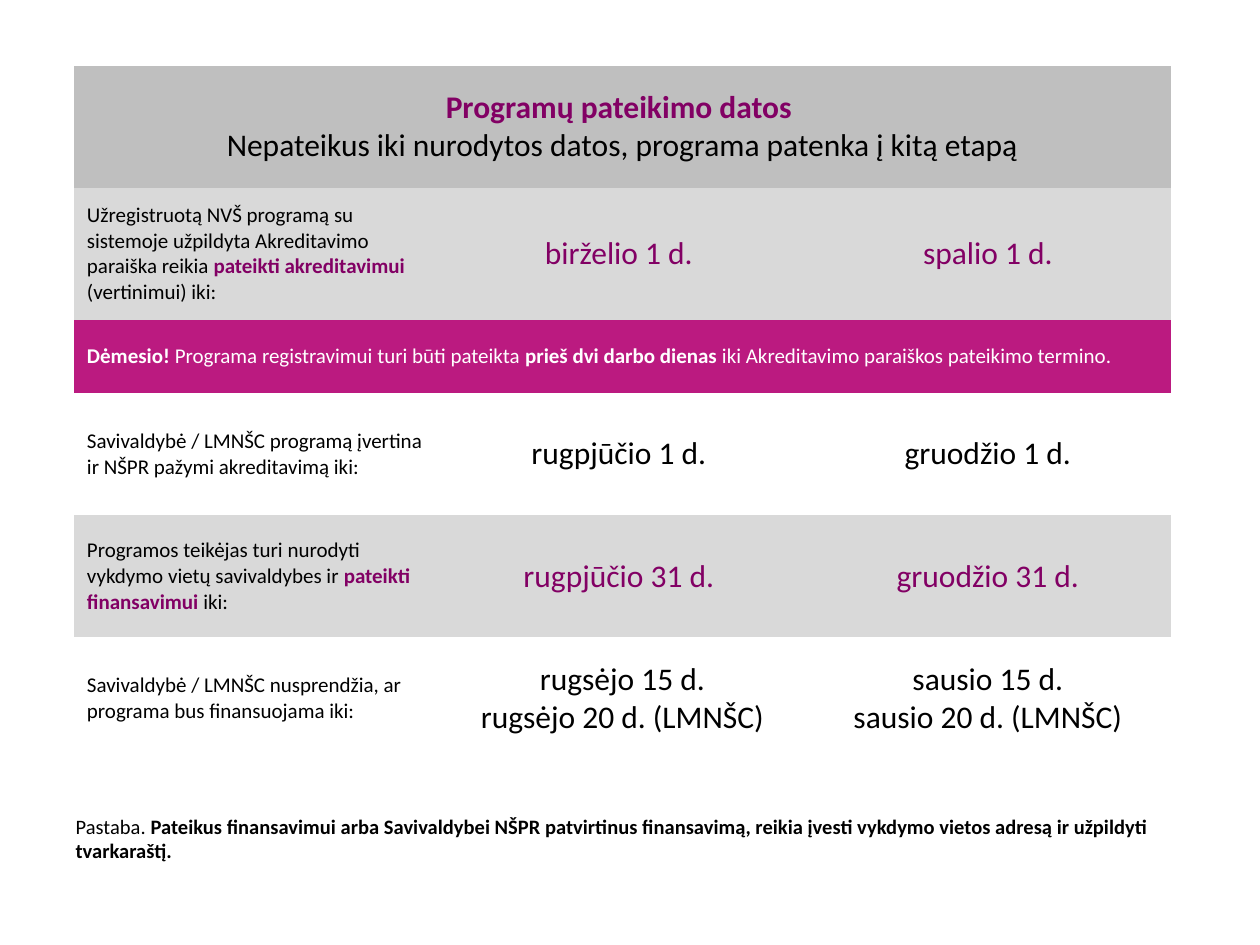
from pptx import Presentation
from pptx.dml.color import RGBColor
from pptx.enum.text import MSO_ANCHOR, PP_ALIGN
from pptx.oxml.ns import qn
from pptx.util import Inches, Pt

PURPLE = RGBColor(0x82, 0x00, 0x64)
MAGENTA = RGBColor(0xBB, 0x1A, 0x80)
BLACK = RGBColor(0x00, 0x00, 0x00)
WHITE = RGBColor(0xFF, 0xFF, 0xFF)
HEADER_GRAY = RGBColor(0xBF, 0xBF, 0xBF)
ROW_GRAY = RGBColor(0xD9, 0xD9, 0xD9)
NO_GRID_STYLE = "{2D5ABB26-0587-4C30-8999-92F81FD0307C}"

HEADING = [
    [("Programų pateikimo datos ", True, PURPLE)],
    [("Nepateikus iki nurodytos datos, programa patenka į kitą etapą", False, BLACK)],
]
WARNING = [[
    ("Dėmesio! ", True, WHITE),
    ("Programa registravimui turi būti pateikta ", False, WHITE),
    ("prieš dvi darbo dienas ", True, WHITE),
    ("iki Akreditavimo paraiškos pateikimo termino.", False, WHITE),
]]
STAGES = {
    1: ([("Užregistruotą NVŠ programą su sistemoje užpildyta Akreditavimo paraiška reikia ", False, BLACK),
         ("pateikti akreditavimui ", True, PURPLE),
         ("(vertinimui) iki:", False, BLACK)],
        [["birželio 1 d. "], ["spalio 1 d."]], PURPLE, ROW_GRAY),
    3: ([("Savivaldybė / LMNŠC programą įvertina ir NŠPR pažymi akreditavimą iki:", False, BLACK)],
        [["rugpjūčio 1 d. "], ["gruodžio 1 d."]], BLACK, None),
    4: ([("Programos teikėjas turi nurodyti vykdymo vietų savivaldybes ir ", False, BLACK),
         ("pateikti finansavimui", True, PURPLE),
         (" iki:", False, BLACK)],
        [["rugpjūčio 31 d. "], ["gruodžio 31 d."]], PURPLE, ROW_GRAY),
    5: ([("Savivaldybė / LMNŠC nusprendžia, ar programa bus finansuojama iki:", False, BLACK)],
        [["rugsėjo 15 d.", "rugsėjo 20 d. (LMNŠC)"],
         ["sausio 15 d.", "sausio 20 d. (LMNŠC)"]], BLACK, None),
}
NOTE = [[
    ("Pastaba. ", False, BLACK),
    ("Pateikus finansavimui arba Savivaldybei NŠPR patvirtinus finansavimą, "
     "reikia įvesti vykdymo vietos adresą ir užpildyti tvarkaraštį.", True, BLACK),
]]
COLUMN_WIDTH = 2.9
ROW_HEIGHTS = [0.97, 1.05, 0.58, 0.97, 0.97, 0.97]


def write(frame, paragraphs, size=12, align=PP_ALIGN.LEFT):
    for index, runs in enumerate(paragraphs):
        paragraph = frame.add_paragraph() if index else frame.paragraphs[0]
        paragraph.alignment = align
        for text, bold, color in runs:
            run = paragraph.add_run()
            run.text = text
            run.font.name = "Calibri"
            run.font.size = Pt(size)
            run.font.bold = bold
            run.font.color.rgb = color


def fill_cell(cell, paragraphs, fill, **text_format):
    cell.vertical_anchor = MSO_ANCHOR.MIDDLE
    if fill is None:
        cell.fill.background()
    else:
        cell.fill.solid()
        cell.fill.fore_color.rgb = fill
    write(cell.text_frame, paragraphs, **text_format)


def main():
    presentation = Presentation()
    presentation.slide_width, presentation.slide_height = Inches(10), Inches(7.5)
    slide = presentation.slides.add_slide(presentation.slide_layouts[5])

    note = slide.shapes.title
    note.left, note.top = Inches(0.5), Inches(5.01)
    note.width, note.height = Inches(8.91), Inches(1.89)
    note.text_frame.word_wrap = True
    note.text_frame.vertical_anchor = MSO_ANCHOR.BOTTOM
    write(note.text_frame, NOTE, size=11.7)

    schedule = slide.shapes.add_table(
        len(ROW_HEIGHTS), 3, Inches(0.59), Inches(0.52),
        Inches(3 * COLUMN_WIDTH), Inches(sum(ROW_HEIGHTS))).table
    schedule.first_row = schedule.horz_banding = False
    schedule._tbl.tblPr.find(qn("a:tableStyleId")).text = NO_GRID_STYLE
    for column in schedule.columns:
        column.width = Inches(COLUMN_WIDTH)
    for row, height in zip(schedule.rows, ROW_HEIGHTS):
        row.height = Inches(height)

    for row in (0, 2):
        schedule.cell(row, 0).merge(schedule.cell(row, 2))
    fill_cell(schedule.cell(0, 0), HEADING, HEADER_GRAY, size=18, align=PP_ALIGN.CENTER)
    fill_cell(schedule.cell(2, 0), WARNING, MAGENTA)
    for row, (stage, deadlines, date_color, fill) in STAGES.items():
        fill_cell(schedule.cell(row, 0), [stage], fill)
        for column, dates in enumerate(deadlines, 1):
            fill_cell(schedule.cell(row, column), [[(date, False, date_color)] for date in dates],
                      fill, size=18, align=PP_ALIGN.CENTER)

    presentation.save("out.pptx")


if __name__ == "__main__":
    main()
